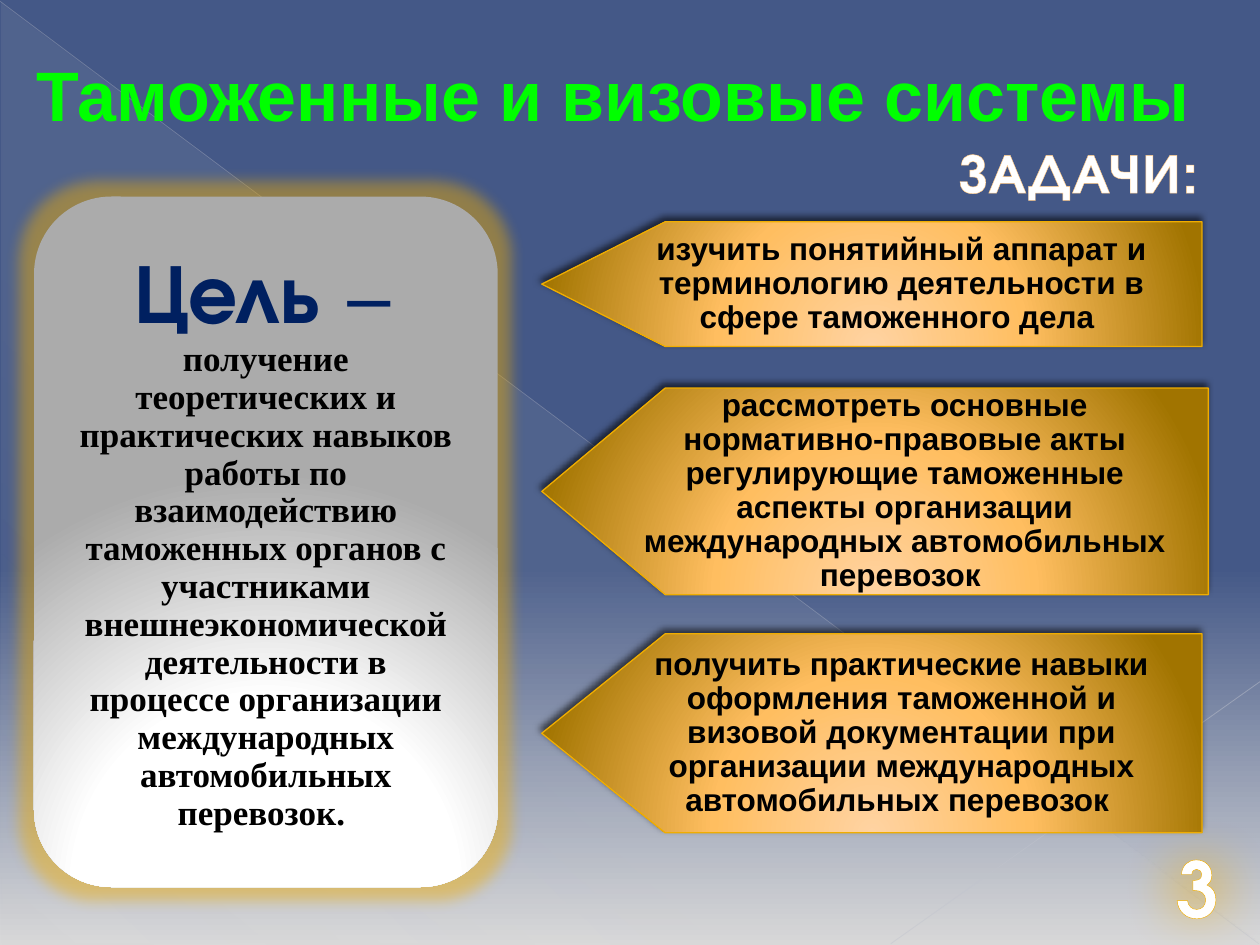
from dataclasses import dataclass

from lxml import etree
from pptx import Presentation
from pptx.dml.color import RGBColor
from pptx.enum.shapes import MSO_CONNECTOR, MSO_SHAPE
from pptx.enum.text import MSO_ANCHOR, PP_ALIGN
from pptx.oxml import parse_xml
from pptx.oxml.ns import qn
from pptx.util import Inches, Pt

STRAIGHT = MSO_CONNECTOR.STRAIGHT
ELLIPSE, ROUNDED = MSO_SHAPE.OVAL, MSO_SHAPE.ROUNDED_RECTANGLE
TRIANGLE = MSO_SHAPE.RIGHT_TRIANGLE
CENTER, LEFT = PP_ALIGN.CENTER, PP_ALIGN.LEFT
MIDDLE, TOP = MSO_ANCHOR.MIDDLE, MSO_ANCHOR.TOP
NS = 'xmlns:a="http://schemas.openxmlformats.org/drawingml/2006/main"'
RADIAL = ('<a:path path="circle">'
          '<a:fillToRect l="50000" t="155000" r="50000" b="-55000"/></a:path>')


@dataclass(frozen=True)
class Theme:
    sans: str = "Arial"
    serif: str = "Times New Roman"
    display: str = "TeX Gyre Adventor"
    title: str = "00FF00"
    navy: str = "002060"
    black: str = "000000"
    white: str = "FFFFFF"
    gold: str = "F0AD00"
    dark_gold: str = "B28000"
    pale_gold: str = "FFC780"
    sky: tuple = ((60, "445887", 100), (100, "D9D9D9", 100))
    veil: tuple = ((0, "D4D4D6", 10), (70, "D4D4D6", 8), (100, "D4D4D6", 1))
    silver: tuple = ((0, "FFFFFF", 100), (46, "FFFFFF", 100), (100, "ABABAB", 100))
    amber: tuple = ((0, "FFD3A2", 100), (46, "FFBE60", 100), (100, "A17400", 100))
    title_size: int = 40
    heading_size: int = 32
    goal_size: int = 48
    dash_size: int = 44
    goal_text_size: int = 20
    task_size: int = 18
    number_size: int = 44


T = Theme()


def rgb(value):
    return RGBColor.from_string(value)


def color_xml(color, alpha=100):
    return f'<a:srgbClr val="{color}"><a:alpha val="{alpha * 1000}"/></a:srgbClr>'


def set_gradient(owner, fill, stops, shade):
    fill.gradient()
    old = next(owner.iter(qn("a:gradFill")))
    items = "".join(f'<a:gs pos="{pos * 1000}">{color_xml(color, alpha)}</a:gs>'
                    for pos, color, alpha in stops)
    old.getparent().replace(old, parse_xml(
        f'<a:gradFill {NS} rotWithShape="1"><a:gsLst>{items}</a:gsLst>{shade}</a:gradFill>'))


def linear(angle):
    return f'<a:lin ang="{angle * 60000}" scaled="0"/>'


def set_effect(sp, tag, attrs="", inner=""):
    sp.shadow.inherit = False
    effects = sp._element.spPr.find(qn("a:effectLst"))
    effects.append(parse_xml(f'<a:{tag} {NS} {attrs}>{inner}</a:{tag}>'))


def set_frame(sp, anchor, insets=None, align=CENTER):
    tf = sp.text_frame
    tf.word_wrap = True
    tf.vertical_anchor = anchor
    if insets:
        tf.margin_left, tf.margin_top, tf.margin_right, tf.margin_bottom = map(Inches, insets)
    p = tf.paragraphs[0]
    p.alignment = align
    return p


def set_font(font, name, size, color, bold=True):
    font.name, font.size, font.bold = name, Pt(size), bold
    font.color.rgb = rgb(color)


def outline_text(run, color, width):
    run._r.get_or_add_rPr().insert(0, parse_xml(
        f'<a:ln {NS} w="{Pt(width)}"><a:solidFill>{color_xml(color)}</a:solidFill></a:ln>'))


def add_backdrop(slide, left, top, width, height):
    set_gradient(slide._element, slide.background.fill, T.sky, linear(90))
    sp = slide.shapes.add_shape(TRIANGLE, *map(Inches, (left, top, width, height)))
    sp.shadow.inherit = False
    set_gradient(sp._element.spPr, sp.fill, T.veil, linear(133))
    sp.line.fill.background()
    lines = ((0, 0.01, 9.99, 7.49, "B9BDC8", 0.39, 35),
             (10, 5.41, 7.07, 7.49, "C1C4CE", 0.47, 45))
    for x1, y1, x2, y2, color, weight, alpha in lines:
        line = slide.shapes.add_connector(STRAIGHT, *map(Inches, (x1, y1, x2, y2)))
        line.line.color.rgb = rgb(color)
        line.line.width = Pt(weight)
        spPr = line._element.spPr
        tone = next(spPr.iter(qn("a:srgbClr")))
        etree.SubElement(tone, qn("a:alpha"), val=str(alpha * 1000))
        etree.SubElement(spPr, qn("a:effectLst"))


def add_goal(slide, left, top, width, height):
    sp = slide.shapes.add_shape(ROUNDED, *map(Inches, (left, top, width, height)))
    set_gradient(sp._element.spPr, sp.fill, T.silver, RADIAL)
    sp.line.fill.background()
    set_effect(sp, "glow", f'rad="{Pt(17)}"', color_xml(T.gold, 45))
    p = set_frame(sp, MIDDLE, (0.18, 0.08, 0.18, 0.08))
    p.line_spacing = 0.9
    runs = (("Цель", T.display, T.goal_size, T.navy, True),
            (" − ", T.display, T.dash_size, T.navy, False),
            ("получение теоретических и практических навыков работы по взаимодействию "
             "таможенных органов с участниками внешнеэкономической деятельности в процессе "
             "организации международных автомобильных перевозок. ",
             T.serif, T.goal_text_size, T.black, True))
    for text, *style in runs:
        r = p.add_run()
        r.text = text
        set_font(r.font, *style)


def add_task(slide, text, left, top, width, height, tip=0.98):
    right, bottom, shoulder = left + width, top + height, left + tip
    points = [(right, bottom), (shoulder, bottom), (left, top + height / 2),
              (shoulder, top), (right, top)]
    points = [(Inches(x), Inches(y)) for x, y in points]
    builder = slide.shapes.build_freeform(*points[0])
    builder.add_line_segments(points[1:], close=True)
    sp = builder.convert_to_shape()
    set_gradient(sp._element.spPr, sp.fill, T.amber, RADIAL)
    sp.line.color.rgb = rgb(T.gold)
    sp.line.width = Pt(0.75)
    set_effect(sp, "outerShdw",
               f'blurRad="{Pt(4)}" dist="{Pt(3)}" dir="{245 * 60000}" rotWithShape="0"',
               color_xml(T.black, 60))
    p = set_frame(sp, MIDDLE, (0.73, 0.14, 0.26, 0.14))
    p.line_spacing = 0.9
    p.text = text
    set_font(p.font, T.sans, T.task_size, T.black)


def add_label(slide, text, left, top, width, height, name, size, color, align):
    box = slide.shapes.add_textbox(*map(Inches, (left, top, width, height)))
    p = set_frame(box, TOP, align=align)
    r = p.add_run()
    r.text = text
    set_font(r.font, name, size, color)
    return r


def add_number(slide, text, left, top, width, height):
    sp = slide.shapes.add_shape(ELLIPSE, *map(Inches, (left, top, width, height)))
    sp.fill.solid()
    sp.fill.fore_color.rgb = rgb(T.gold)
    tone = next(sp._element.spPr.iter(qn("a:srgbClr")))
    etree.SubElement(tone, qn("a:alpha"), val="79000")
    sp.line.color.rgb = rgb(T.dark_gold)
    sp.line.width = Pt(2)
    set_effect(sp, "softEdge", f'rad="{Inches(0.44)}"')
    r = set_frame(sp, MIDDLE).add_run()
    r.text = text
    set_font(r.font, T.display, T.number_size, T.white)
    outline_text(r, T.gold, 0.8)


def main():
    prs = Presentation()
    prs.slide_width, prs.slide_height = Inches(10), Inches(7.5)
    slide = prs.slides.add_slide(prs.slide_layouts[6])

    add_backdrop(slide, 0.01, 0.02, 9.99, 7.48)
    add_goal(slide, 0.27, 1.56, 3.68, 5.48)

    # Tasks
    tasks = (
        ("изучить понятийный аппарат и терминологию деятельности в сфере "
         "таможенного дела ", 1.76, 5.24, 0.99),
        ("рассмотреть основные нормативно-правовые акты регулирующие таможенные аспекты "
         "организации международных автомобильных перевозок ", 3.08, 5.29, 1.64),
        ("получить практические навыки оформления таможенной и визовой документации при "
         "организации международных автомобильных перевозок ", 5.03, 5.24, 1.58))
    for text, top, width, height in tasks:
        add_task(slide, text, 4.3, top, width, height)

    # Headings and slide number
    r = add_label(slide, "ЗАДАЧИ:", 7.51, 1.04, 2.48, 0.64,
                  T.display, T.heading_size, T.white, LEFT)
    r._r.get_or_add_rPr().set("spc", "100")
    outline_text(r, T.pale_gold, 2.48)
    add_label(slide, "Таможенные и визовые системы", 0, 0.36, 9.73, 0.77,
              T.sans, T.title_size, T.title, CENTER)
    add_number(slide, "3", 8.72, 6.29, 1.57, 1.5)

    prs.save("out.pptx")


if __name__ == "__main__":
    main()
